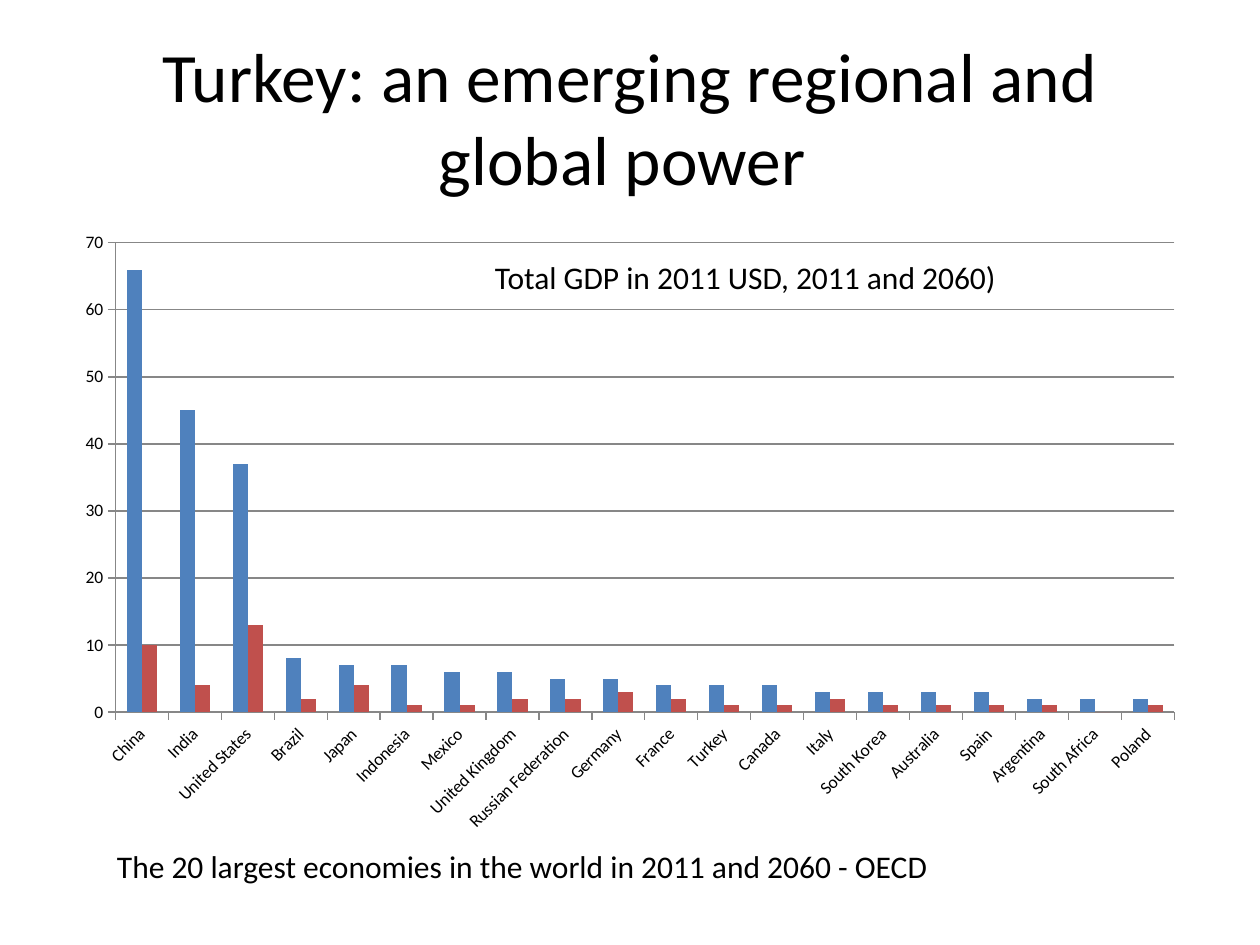
from pptx import Presentation
from pptx.chart.data import CategoryChartData
from pptx.dml.color import RGBColor
from pptx.enum.chart import XL_CHART_TYPE as ChartType, XL_TICK_MARK as Tick
from pptx.enum.text import MSO_ANCHOR as Anchor, PP_ALIGN as Align
from pptx.oxml.ns import qn
from pptx.util import Inches, Pt

# Content
TITLE = "Turkey: an emerging regional and global power "
CHART_NOTE = "Total GDP in 2011 USD, 2011 and 2060)"
SOURCE = "The 20 largest economies in the world in 2011 and 2060 - OECD"
GDP = [  # country, 2060, 2011
    ("China", 66, 10), ("India", 45, 4), ("United States", 37, 13),
    ("Brazil", 8, 2), ("Japan", 7, 4), ("Indonesia", 7, 1),
    ("Mexico", 6, 1), ("United Kingdom", 6, 2), ("Russian Federation", 5, 2),
    ("Germany", 5, 3), ("France", 4, 2), ("Turkey", 4, 1),
    ("Canada", 4, 1), ("Italy", 3, 2), ("South Korea", 3, 1),
    ("Australia", 3, 1), ("Spain", 3, 1), ("Argentina", 2, 1),
    ("South Africa", 2, 0), ("Poland", 2, 1),
]
SERIES = [("Series 1", "4F81BD"), ("Series 2", "C0504D")]
FONT, INK, AXIS = "Calibri", "000000", "878787"

# Layout
WIDTH, HEIGHT, MARGIN = 10, 7.5, 0.5
INNER = WIDTH - 2 * MARGIN


def color(hex_code):
    return RGBColor.from_string(hex_code)


def set_font(font, size):
    font.name, font.size = FONT, Pt(size)
    font.color.rgb = color(INK)


def add_text(slide, text, left, top, width, height, size=18,
             align=Align.LEFT, anchor=Anchor.TOP):
    box = slide.shapes.add_textbox(*map(Inches, (left, top, width, height)))
    frame = box.text_frame
    frame.word_wrap = True
    frame.vertical_anchor = anchor
    paragraph = frame.paragraphs[0]
    paragraph.alignment = align
    run = paragraph.add_run()
    run.text = text
    set_font(run.font, size)


def add_gdp_chart(slide, left, top, width, height):
    countries, *columns = zip(*GDP)
    data = CategoryChartData()
    data.categories = countries
    for (name, _), values in zip(SERIES, columns):
        data.add_series(name, values)
    chart = slide.shapes.add_chart(
        ChartType.COLUMN_CLUSTERED,
        *map(Inches, (left, top, width, height)), data).chart
    chart.has_legend = chart.has_title = False
    set_font(chart.font, 10)

    # Columns
    plot = chart.plots[0]
    plot.gap_width, plot.overlap = 150, 0
    plot.vary_by_categories = False
    for series, (_, fill) in zip(plot.series, SERIES):
        series.format.fill.solid()
        series.format.fill.fore_color.rgb = color(fill)

    # Axes and gridlines
    countries_axis, gdp_axis = chart.category_axis, chart.value_axis
    gdp_axis.minimum_scale, gdp_axis.maximum_scale = 0, 70
    gdp_axis.major_unit = 10
    gdp_axis.has_major_gridlines = True
    for axis in (countries_axis, gdp_axis):
        axis.major_tick_mark = Tick.OUTSIDE
        set_font(axis.tick_labels.font, 10)
    for part in (countries_axis, gdp_axis, gdp_axis.major_gridlines):
        part.format.line.color.rgb = color(AXIS)
        part.format.line.width = Pt(0.75)

    # Slanted country names
    label_body = countries_axis._element.find(qn("c:txPr")).find(qn("a:bodyPr"))
    label_body.set("rot", str(-45 * 60000))
    label_body.set("vert", "horz")


def main():
    deck = Presentation()
    deck.slide_width, deck.slide_height = Inches(WIDTH), Inches(HEIGHT)
    slide = deck.slides.add_slide(deck.slide_layouts[6])
    add_text(slide, TITLE, MARGIN, 0.3, INNER, 1.25, size=39.6,
             align=Align.CENTER, anchor=Anchor.MIDDLE)
    add_gdp_chart(slide, MARGIN, 1.75, INNER, 4.95)
    add_text(slide, SOURCE, 0.83, 6.67, 8.5, 0.4)
    add_text(slide, CHART_NOTE, 3.83, 2, 5.08, 0.4)
    deck.save("out.pptx")


if __name__ == "__main__":
    main()
